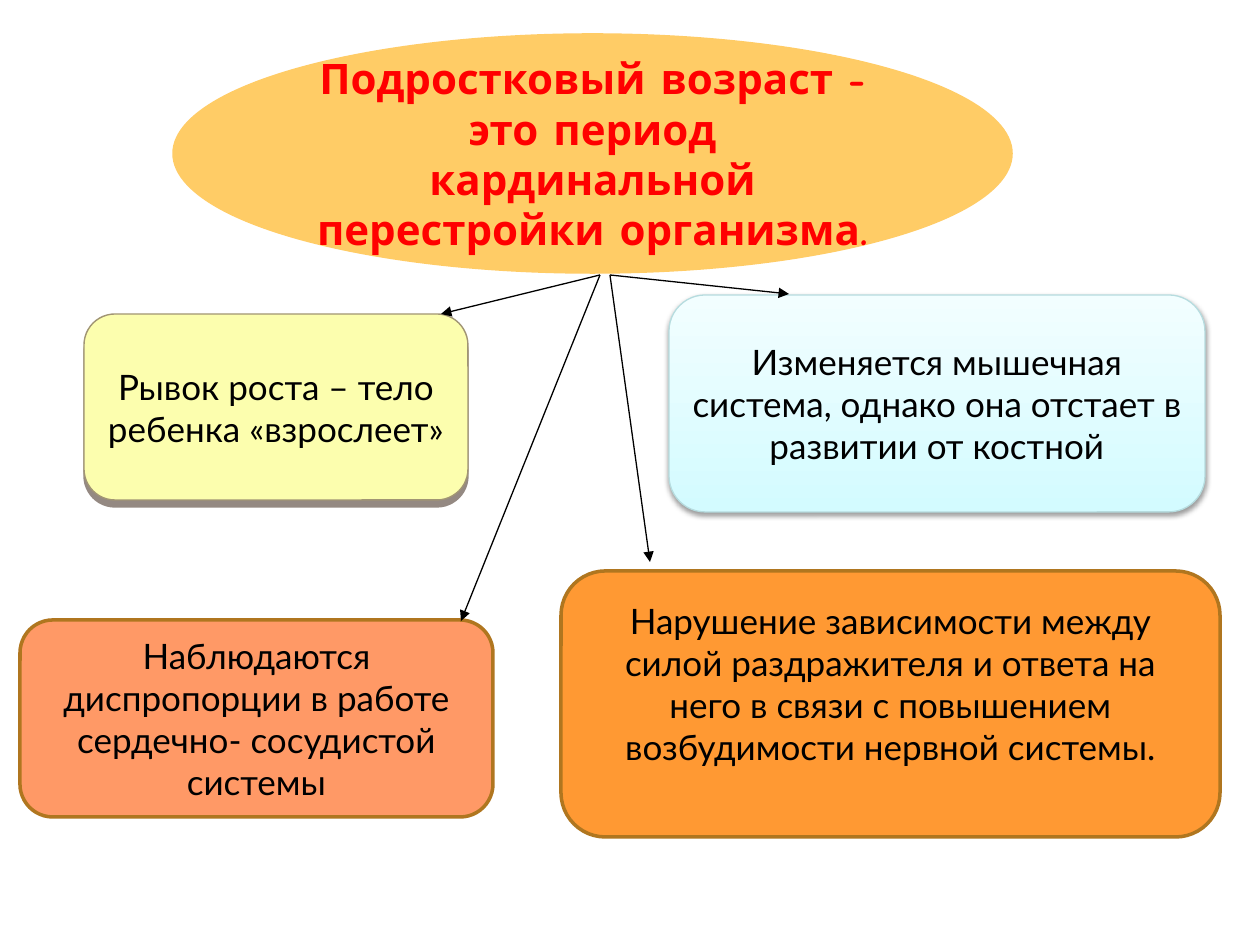
from lxml import etree
from pptx import Presentation
from pptx import util as u
from pptx.dml.color import RGBColor
from pptx.enum import shapes, text
from pptx.oxml.ns import qn

PX = 914400 / 126


def px(n):
    return u.Emu(round(n * PX))


def rgb(value):
    return RGBColor.from_string(value)


class Board:
    """Holds the style and the slide being drawn."""
    body_font, body_size, ink = "Lato", 20, "000000"
    head_font, head_size, head_ink = "Comic Neue", 24, "FF0000"

    def __init__(self, slide):
        self.s = slide

    def _shape(self, kind, box, fill, line, width):
        sp = self.s.shapes.add_shape(kind, *map(px, box))
        sp.shadow.inherit = False
        if isinstance(fill, str):
            sp.fill.solid()
            sp.fill.fore_color.rgb = rgb(fill)
        else:
            sp.fill.gradient()
            sp.fill.gradient_angle = 90
            for stop, color in zip(sp.fill.gradient_stops, fill):
                stop.color.rgb = rgb(color)
        sp.line.color.rgb = rgb(line)
        sp.line.width = u.Pt(width)
        return sp

    def _write(self, sp, words, font, size, color, bold=False):
        tf = sp.text_frame
        tf.word_wrap = True
        tf.vertical_anchor = text.MSO_ANCHOR.MIDDLE
        p = tf.paragraphs[0]
        p.text = words
        p.alignment = text.PP_ALIGN.CENTER
        p.font.name, p.font.size, p.font.bold = font, u.Pt(size), bold
        p.font.color.rgb = rgb(color)
        return p

    def _shadow(self, sp, color, alpha, blur, dist):
        """Drop a shadow straight down; alpha in percent, lengths in points."""
        effects = sp._element.spPr.find(qn("a:effectLst"))
        shade = etree.SubElement(
            effects, qn("a:outerShdw"), blurRad=str(u.Pt(blur)),
            dist=str(u.Pt(dist)), dir="5400000", rotWithShape="0")
        clr = etree.SubElement(shade, qn("a:srgbClr"), val=color)
        etree.SubElement(clr, qn("a:alpha"), val=str(alpha * 1000))

    def heading(self, words, box, fill):
        sp = self._shape(shapes.MSO_SHAPE.OVAL, box, fill, fill, 2)
        p = self._write(sp, words, self.head_font, self.head_size,
                        self.head_ink, bold=True)
        p.space_before = u.Pt(16.5)

    def card(self, words, box, fill, line, width=2, shadow=None, bottom=6):
        sp = self._shape(shapes.MSO_SHAPE.ROUNDED_RECTANGLE, box, fill, line, width)
        self._write(sp, words, self.body_font, self.body_size, self.ink)
        sp.text_frame.margin_bottom = px(bottom)
        if shadow:
            self._shadow(sp, *shadow)

    def arrow(self, start, end):
        c = self.s.shapes.add_connector(
            shapes.MSO_CONNECTOR.STRAIGHT, *map(px, start + end))
        c.line.color.rgb = rgb(self.ink)
        c.line.width = u.Pt(0.75)
        etree.SubElement(c.line._get_or_add_ln(), qn("a:tailEnd"), type="triangle")
        etree.SubElement(c._element.spPr, qn("a:effectLst"))


def main():
    prs = Presentation()
    prs.slide_width, prs.slide_height = px(1260), px(945)
    board = Board(prs.slides.add_slide(prs.slide_layouts[6]))

    board.heading("Подростковый возраст - это период кардинальной "
                  "перестройки организма.", (174, 35, 837, 237), "FFCC66")
    board.card("Рывок роста – тело ребенка «взрослеет»",
               (84, 314, 384, 186), "FCFEAE", "A19574", 0.79,
               shadow=("4E3B30", 60, 0, 4))
    board.card("Изменяется мышечная система, однако она отстает в развитии от костной",
               (669, 295, 536, 217), ("D3FBFF", "F2FEFF"), "B6DCDF", 0.75,
               shadow=("000000", 38, 3.1, 1.6))
    board.card("Наблюдаются диспропорции в работе сердечно- сосудистой системы",
               (20, 620, 473, 197), "FF9966", "B0761F")
    board.card("Нарушение зависимости между силой раздражителя и ответа на него "
               "в связи с повышением возбудимости нервной системы.",
               (561, 571, 659, 266), "FF9933", "B0761F", bottom=48)

    left, right = (600, 275), (610, 275)
    for start, end in ((left, (441, 314)), (right, (789, 294)),
                       (right, (650, 562)), (left, (461, 621))):
        board.arrow(start, end)

    prs.save("out.pptx")


if __name__ == "__main__":
    main()
